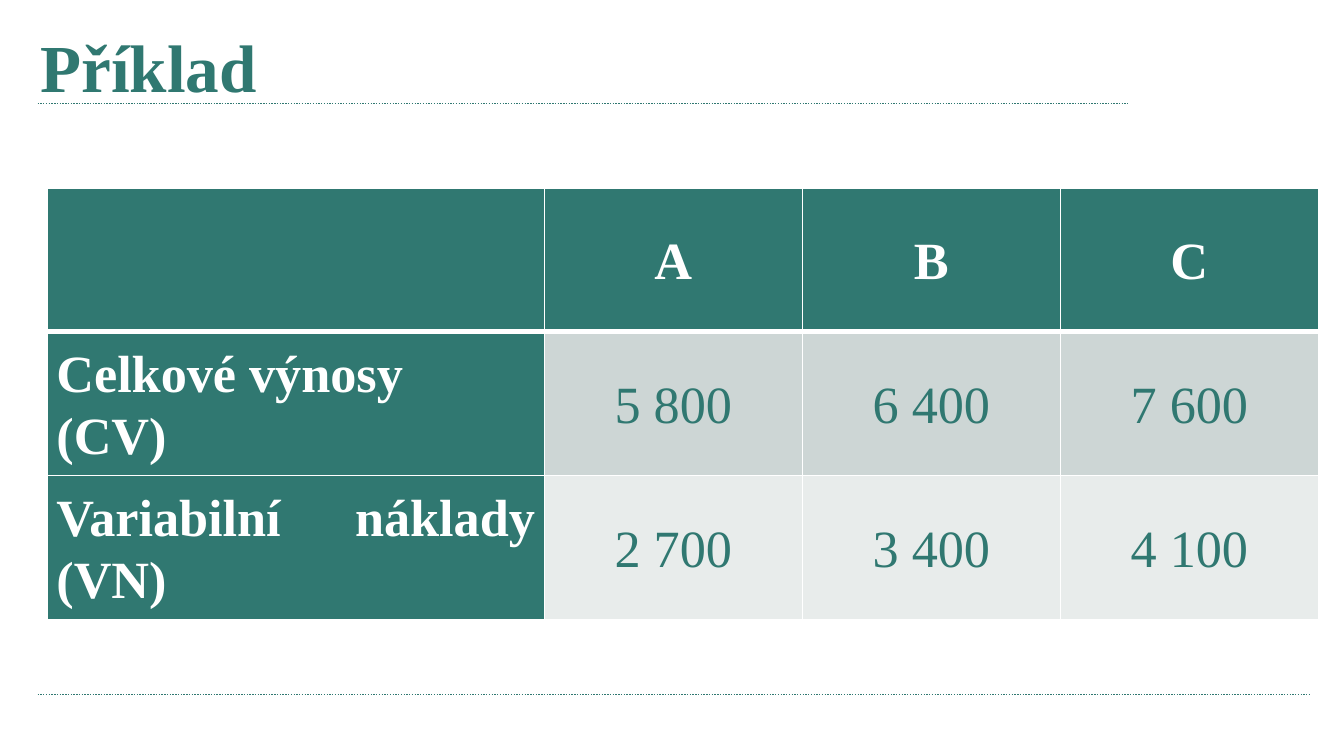
from dataclasses import dataclass

from lxml.etree import SubElement
from pptx import Presentation
from pptx.dml.color import RGBColor
from pptx.enum.dml import MSO_LINE
from pptx.enum.shapes import MSO_CONNECTOR
from pptx.enum.text import MSO_ANCHOR, PP_ALIGN
from pptx.oxml.ns import qn
from pptx.util import Inches, Pt

COLORS = {"teal": "307871", "white": "FFFFFF", "band_dark": "CDD6D5", "band_light": "E8ECEB"}
FONT = "Times New Roman"


@dataclass
class Rule:
    left: float
    right: float
    y: float


@dataclass
class TableRow:
    texts: list[str]
    band: str


RULES = [Rule(0.28, 8.39, 0.77), Rule(0.28, 9.75, 5.17)]
ROWS = [
    TableRow(["", "A", "B", "C"], "teal"),
    TableRow(["Celkové výnosy \n(CV)", "5 800", "6 400", "7 600"], "band_dark"),
    TableRow(["Variabilní náklady (VN)", "2 700", "3 400", "4 100"], "band_light"),
]
COLUMN_WIDTHS = [3.7] + [1.92] * 3
ROW_HEIGHT = 1.07


def color(name: str) -> RGBColor:
    return RGBColor.from_string(COLORS[name])


def style_font(font, size: int, color_name: str, bold: bool) -> None:
    font.name = FONT
    font.size = Pt(size)
    font.bold = bold
    font.color.rgb = color(color_name)


def draw_rule(slide, rule: Rule) -> None:
    connector = slide.shapes.add_connector(
        MSO_CONNECTOR.STRAIGHT,
        Inches(rule.left), Inches(rule.y), Inches(rule.right), Inches(rule.y),
    )
    connector.line.color.rgb = color("teal")
    connector.line.width = Pt(0.75)
    connector.line.dash_style = MSO_LINE.ROUND_DOT
    SubElement(connector._element.spPr, qn("a:effectLst"))


def set_borders(cell, top: float, bottom: float) -> None:
    properties = cell._tc.get_or_add_tcPr()
    for side, width in (("L", 1), ("R", 1), ("T", top), ("B", bottom)):
        line = SubElement(properties, qn(f"a:ln{side}"), w=str(Pt(width)))
        fill = SubElement(line, qn("a:solidFill"))
        SubElement(fill, qn("a:srgbClr"), val=COLORS["white"])


def fill_cell(cell, text: str, row_index: int, column_index: int, band: str) -> None:
    is_heading = row_index == 0 or column_index == 0
    # A thick line separates the header row from the body
    set_borders(cell, top=3 if row_index == 1 else 1, bottom=3 if row_index == 0 else 1)
    cell.fill.solid()
    cell.fill.fore_color.rgb = color("teal" if is_heading else band)
    cell.margin_left = cell.margin_right = Inches(0.07)
    cell.margin_top = cell.margin_bottom = 0
    cell.vertical_anchor = MSO_ANCHOR.MIDDLE
    cell.text_frame.text = text
    for paragraph in cell.text_frame.paragraphs:
        paragraph.alignment = PP_ALIGN.JUSTIFY if column_index == 0 else PP_ALIGN.CENTER
        paragraph.line_spacing = 1.07
        for run in paragraph.runs:
            style_font(run.font, 28, "white" if is_heading else "teal", is_heading)


def draw_table(slide, rows: list[TableRow]) -> None:
    table = slide.shapes.add_table(
        len(rows), len(COLUMN_WIDTHS), Inches(0.35), Inches(1.4),
        Inches(sum(COLUMN_WIDTHS)), Inches(ROW_HEIGHT * len(rows)),
    ).table
    for column, width in zip(table.columns, COLUMN_WIDTHS):
        column.width = Inches(width)
    for row_index, row in enumerate(rows):
        table.rows[row_index].height = Inches(ROW_HEIGHT)
        for column_index, text in enumerate(row.texts):
            fill_cell(table.cell(row_index, column_index), text, row_index, column_index, row.band)


def draw_title(slide, text: str) -> None:
    title = slide.shapes.title
    title.left, title.top = Inches(0.2), Inches(0.14)
    title.width, title.height = Inches(8.82), Inches(0.79)
    title.text_frame.text = text
    title.text_frame.vertical_anchor = MSO_ANCHOR.MIDDLE
    title.text_frame.margin_bottom = Inches(0.14)
    paragraph = title.text_frame.paragraphs[0]
    paragraph.alignment = PP_ALIGN.LEFT
    style_font(paragraph.runs[0].font, 36, "teal", True)


def main() -> None:
    # Widescreen page, 16 to 9
    presentation = Presentation()
    presentation.slide_width = Inches(10)
    presentation.slide_height = Inches(10 * 9 / 16)
    slide = presentation.slides.add_slide(presentation.slide_layouts[5])

    # Dotted rules under the title and above the footer
    for rule in RULES:
        draw_rule(slide, rule)

    # Title and table
    draw_title(slide, "Příklad")
    draw_table(slide, ROWS)

    presentation.save("out.pptx")


if __name__ == "__main__":
    main()
